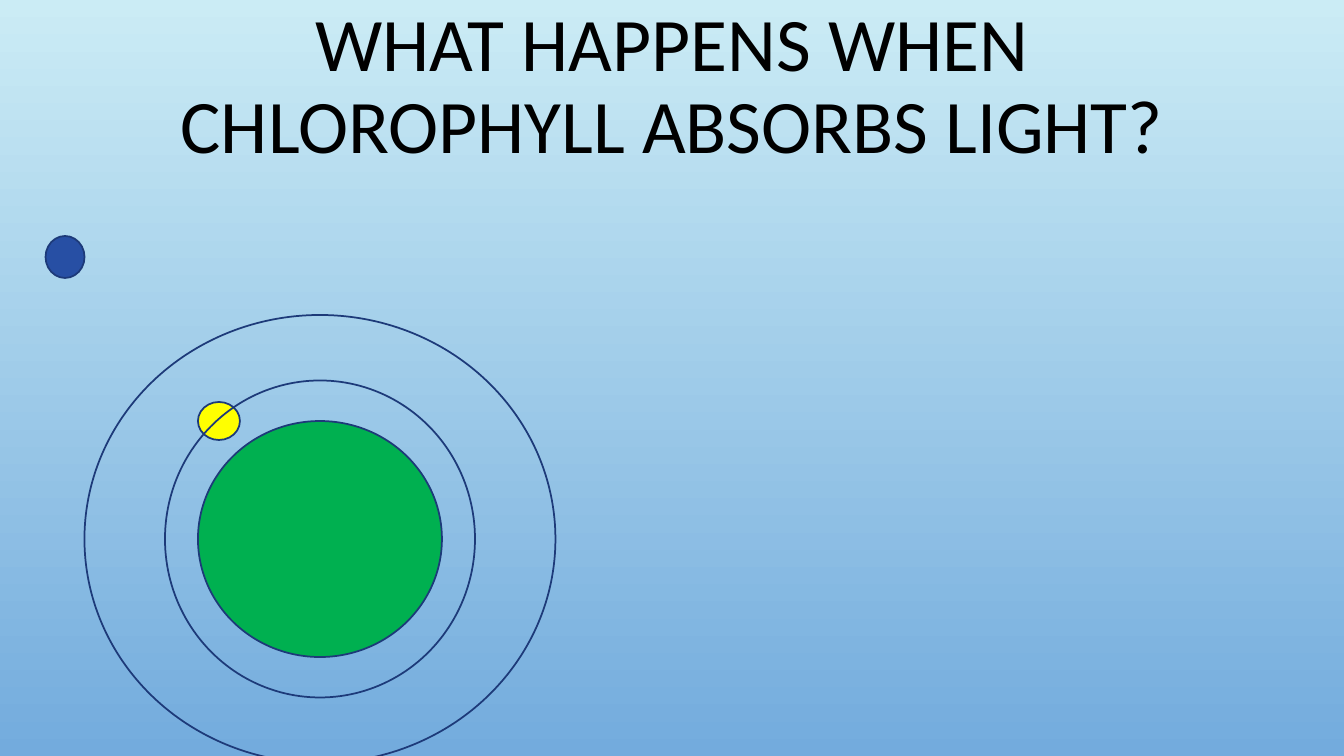
from dataclasses import dataclass

import pptx
import pptx.dml.color
import pptx.enum.shapes
import pptx.enum.text
import pptx.util


@dataclass(frozen=True)
class Theme:
    font: str = "Calibri"
    title_size: int = 54
    title_spacing: float = 0.9
    line_width: float = 1.25
    text: str = "000000"
    outline: str = "1D3A79"
    sky_top: str = "CBECF5"
    sky_bottom: str = "73ABDD"
    chlorophyll: str = "00B050"
    photon: str = "274FA4"
    electron: str = "FFFF00"


def px(length):
    """Turn pixels (100.8 to the inch) into EMU."""
    return pptx.util.Emu(round(length * 914400 / 100.8))


def rgb(code):
    return pptx.dml.color.RGBColor.from_string(code)


class SlideBuilder:
    def __init__(self, slide, theme):
        self.slide = slide
        self.theme = theme

    def background(self, top, bottom):
        fill = self.slide.background.fill
        fill.gradient()
        fill.gradient_angle = 270
        for stop, position, color in zip(fill.gradient_stops, (0, 1), (top, bottom)):
            stop.position = position
            stop.color.rgb = rgb(color)

    def title(self, words, left, top, width, height):
        box = self.slide.shapes.add_textbox(px(left), px(top), px(width), px(height))
        frame = box.text_frame
        frame.word_wrap = True
        frame.vertical_anchor = pptx.enum.text.MSO_ANCHOR.MIDDLE
        paragraph = frame.paragraphs[0]
        paragraph.alignment = pptx.enum.text.PP_ALIGN.CENTER
        paragraph.line_spacing = self.theme.title_spacing
        run = paragraph.add_run()
        run.text = words
        run.font.name = self.theme.font
        run.font.size = pptx.util.Pt(self.theme.title_size)
        run.font.color.rgb = rgb(self.theme.text)

    def ellipse(self, center, width, height, color=None):
        """Draw an outlined ellipse around its center; no color leaves it hollow."""
        x, y = center
        oval = self.slide.shapes.add_shape(
            pptx.enum.shapes.MSO_SHAPE.OVAL,
            px(x - width / 2), px(y - height / 2), px(width), px(height))
        oval.shadow.inherit = False
        if color:
            oval.fill.solid()
            oval.fill.fore_color.rgb = rgb(color)
        else:
            oval.fill.background()
        oval.line.color.rgb = rgb(self.theme.outline)
        oval.line.width = pptx.util.Pt(self.theme.line_width)


def main():
    deck = pptx.Presentation()
    deck.slide_width, deck.slide_height = px(1344), px(756)
    theme = Theme()
    builder = SlideBuilder(deck.slides.add_slide(deck.slide_layouts[6]), theme)

    builder.background(theme.sky_top, theme.sky_bottom)
    builder.title("WHAT HAPPENS WHEN CHLOROPHYLL ABSORBS LIGHT?", 101, 0, 1142, 176)

    atom_center = (320, 539)
    builder.ellipse(atom_center, 244, 236, theme.chlorophyll)
    builder.ellipse((65, 257), 39, 42, theme.photon)
    builder.ellipse((219, 421), 42, 38, theme.electron)
    for orbit_width, orbit_height in ((310, 317), (471, 448)):
        builder.ellipse(atom_center, orbit_width, orbit_height)

    deck.save("out.pptx")


if __name__ == "__main__":
    main()
